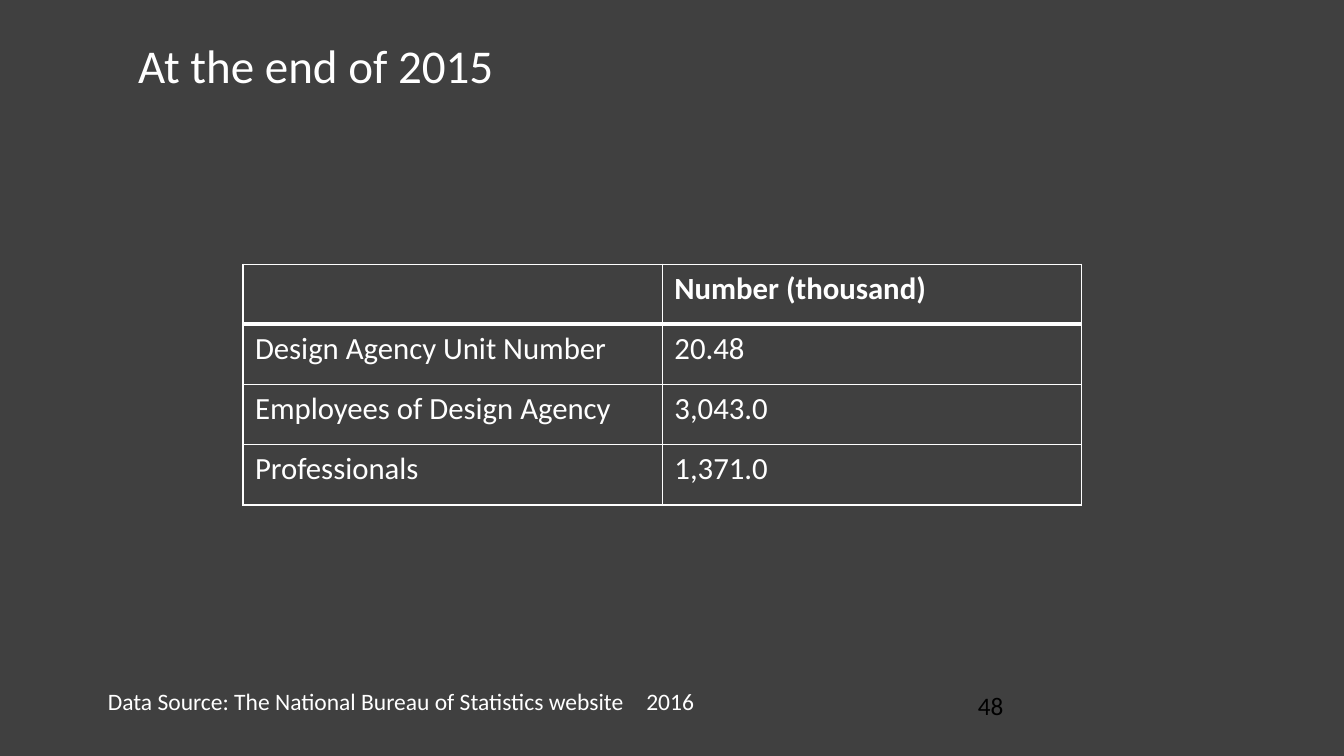
from lxml import etree
from pptx import Presentation
from pptx.dml.color import RGBColor
from pptx.enum.text import MSO_ANCHOR, PP_ALIGN
from pptx.oxml.ns import qn
from pptx.util import Inches, Pt

TOP = MSO_ANCHOR.TOP
LEFT = PP_ALIGN.LEFT
FONT = "Calibri"
COLORS = {"back": "404040", "text": "FFFFFF", "page": "000000"}
ROWS = [
    ("", "Number (thousand)"),
    ("Design Agency Unit Number", "20.48"),
    ("Employees of Design Agency", "3,043.0"),
    ("Professionals", "1,371.0"),
]


def add_run(para, text, size, color="text", bold=False):
    run = para.add_run()
    run.text = text
    font = run.font
    font.name, font.size, font.bold = FONT, Pt(size), bold
    font.color.rgb = RGBColor.from_string(COLORS[color])


def set_frame(frame, side=0.1, top=0.05):
    frame.word_wrap = True
    frame.vertical_anchor = TOP
    frame.margin_left = frame.margin_right = Inches(side)
    frame.margin_top = frame.margin_bottom = Inches(top)
    para = frame.paragraphs[0]
    para.alignment = LEFT
    return para


def place(shape, box):
    shape.left, shape.top, shape.width, shape.height = map(Inches, box)


def add_title(slide, box, text):
    title = slide.shapes.title
    place(title, box)
    add_run(set_frame(title.text_frame, top=0.06), text, 33.6)


def add_label(slide, box, text, size, color="text", side=0.1, stop=None):
    label = slide.shapes.add_textbox(*map(Inches, box))
    para = set_frame(label.text_frame, side)
    if stop:
        # The tab stop sets the gap before the year
        tabs = etree.SubElement(para._p.get_or_add_pPr(), qn("a:tabLst"))
        etree.SubElement(tabs, qn("a:tab"), pos=str(Inches(stop)), algn="l")
    add_run(para, text, size, color)


def set_border(cell, widths):
    props = cell._tc.get_or_add_tcPr()
    for side, width in zip("LRTB", widths):
        line = etree.SubElement(props, qn("a:ln" + side), w=str(Pt(width)))
        fill = etree.SubElement(line, qn("a:solidFill"))
        etree.SubElement(fill, qn("a:srgbClr"), val=COLORS["text"])


def add_grid(slide, box, rows):
    table = slide.shapes.add_table(
        len(rows), len(rows[0]), *map(Inches, box)).table
    table.horz_banding = False
    for r, row in enumerate(rows):
        for c, text in enumerate(row):
            cell = table.cell(r, c)
            cell.margin_left = cell.margin_right = Inches(0.12)
            cell.margin_top = cell.margin_bottom = Inches(0.06)
            # A heavy rule parts the head row from the body
            set_border(cell, (1, 1, 3 if r == 1 else 1, 3 if r == 0 else 1))
            cell.fill.background()
            if text:
                add_run(cell.text_frame.paragraphs[0], text, 22, bold=r == 0)


def main():
    prs = Presentation()
    prs.slide_width, prs.slide_height = Inches(13.33), Inches(7.5)
    slide = prs.slides.add_slide(prs.slide_layouts[5])

    # Dark ground
    fill = slide.background.fill
    fill.solid()
    fill.fore_color.rgb = RGBColor.from_string(COLORS["back"])

    # Title and table
    add_title(slide, (1.27, 0.3, 10.8, 0.9), "At the end of 2015")
    add_grid(slide, (2.41, 2.62, 8.32, 2.39), ROWS)

    # Source line and page number
    add_label(slide, (1, 6.77, 7.84, 0.38),
              "Data Source: The National Bureau of Statistics website\t2016",
              16.8, side=0.07, stop=5.34)
    add_label(slide, (9.6, 6.8, 3.11, 0.52), "48", 18, "page")

    prs.save("out.pptx")


if __name__ == "__main__":
    main()
